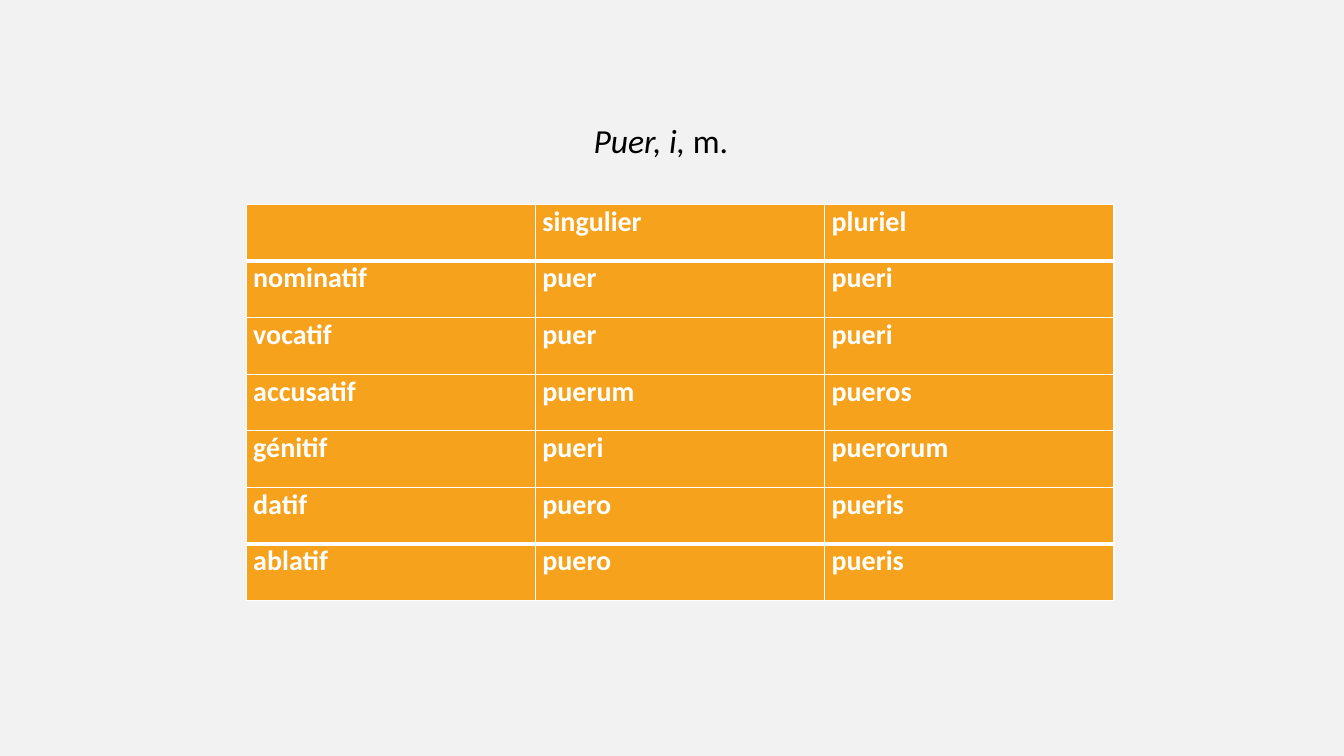
from dataclasses import dataclass

from lxml import etree
from pptx import Presentation
from pptx.dml.color import RGBColor
from pptx.oxml import ns
from pptx.util import Pt

TITLE = [("Puer, i, ", True), ("m.", False)]
DECLENSION = [
    ("", "singulier", "pluriel"),
    ("nominatif", "puer", "pueri"),
    ("vocatif", "puer", "pueri"),
    ("accusatif", "puerum", "pueros"),
    ("génitif", "pueri", "puerorum"),
    ("datif", "puero", "pueris"),
    ("ablatif", "puero", "pueris"),
]


@dataclass(frozen=True)
class Theme:
    font: str = "Calibri"
    background: str = "F2F2F2"
    cell: str = "F6A21D"
    light: str = "FFFFFF"
    dark: str = "000000"
    title_size: int = 24
    cell_size: int = 20
    thin: int = 1
    thick: int = 3


THEME = Theme()
SLIDE_W, SLIDE_H = 960, 540
TITLE_BOX = (416.9, 82.1, 155.5, 36)
TABLE_LEFT, TABLE_TOP = 175.9, 146.2
COL_W, ROW_H = 206.6, 40.4
CELL_INSET = 5


def style_run(r, size, color, bold=False, italic=False):
    r.font.name = THEME.font
    r.font.size = Pt(size)
    r.font.color.rgb = RGBColor.from_string(color)
    r.font.bold = bold
    r.font.italic = italic


def set_borders(cell, top, bottom):
    """Draw all four cell edges; the sides are thin, top and bottom as given."""
    tc_pr = cell._tc.get_or_add_tcPr()
    edges = [("lnL", THEME.thin), ("lnR", THEME.thin), ("lnT", top), ("lnB", bottom)]
    for i, (tag, width) in enumerate(edges):
        ln = etree.Element(ns.qn(f"a:{tag}"), w=str(Pt(width)))
        fill = etree.SubElement(ln, ns.qn("a:solidFill"))
        etree.SubElement(fill, ns.qn("a:srgbClr"), val=THEME.light)
        tc_pr.insert(i, ln)


def add_title(s):
    tf = s.shapes.add_textbox(*map(Pt, TITLE_BOX)).text_frame
    tf.word_wrap = True
    p = tf.paragraphs[0]
    for words, italic in TITLE:
        r = p.add_run()
        r.text = words
        style_run(r, THEME.title_size, THEME.dark, italic=italic)


def add_declension(s):
    n_rows, n_cols = len(DECLENSION), len(DECLENSION[0])
    table = s.shapes.add_table(
        n_rows, n_cols, Pt(TABLE_LEFT), Pt(TABLE_TOP),
        Pt(n_cols * COL_W), Pt(n_rows * ROW_H)).table
    for col in table.columns:
        col.width = Pt(COL_W)

    # Heavy rules set off the header row and the last row.
    rules = [THEME.thick if i in (1, n_rows - 1) else THEME.thin
             for i in range(n_rows + 1)]
    for i, forms in enumerate(DECLENSION):
        table.rows[i].height = Pt(ROW_H)
        for j, form in enumerate(forms):
            cell = table.cell(i, j)
            cell.margin_left = cell.margin_right = Pt(CELL_INSET)
            cell.margin_top = cell.margin_bottom = 0
            cell.fill.solid()
            cell.fill.fore_color.rgb = RGBColor.from_string(THEME.cell)
            set_borders(cell, rules[i], rules[i + 1])
            if form:
                r = cell.text_frame.paragraphs[0].add_run()
                r.text = form
                style_run(r, THEME.cell_size, THEME.light, bold=True)


def main():
    prs = Presentation()
    prs.slide_width, prs.slide_height = Pt(SLIDE_W), Pt(SLIDE_H)
    s = prs.slides.add_slide(prs.slide_layouts[6])
    s.background.fill.solid()
    s.background.fill.fore_color.rgb = RGBColor.from_string(THEME.background)
    add_declension(s)
    add_title(s)
    prs.save("out.pptx")


if __name__ == "__main__":
    main()
